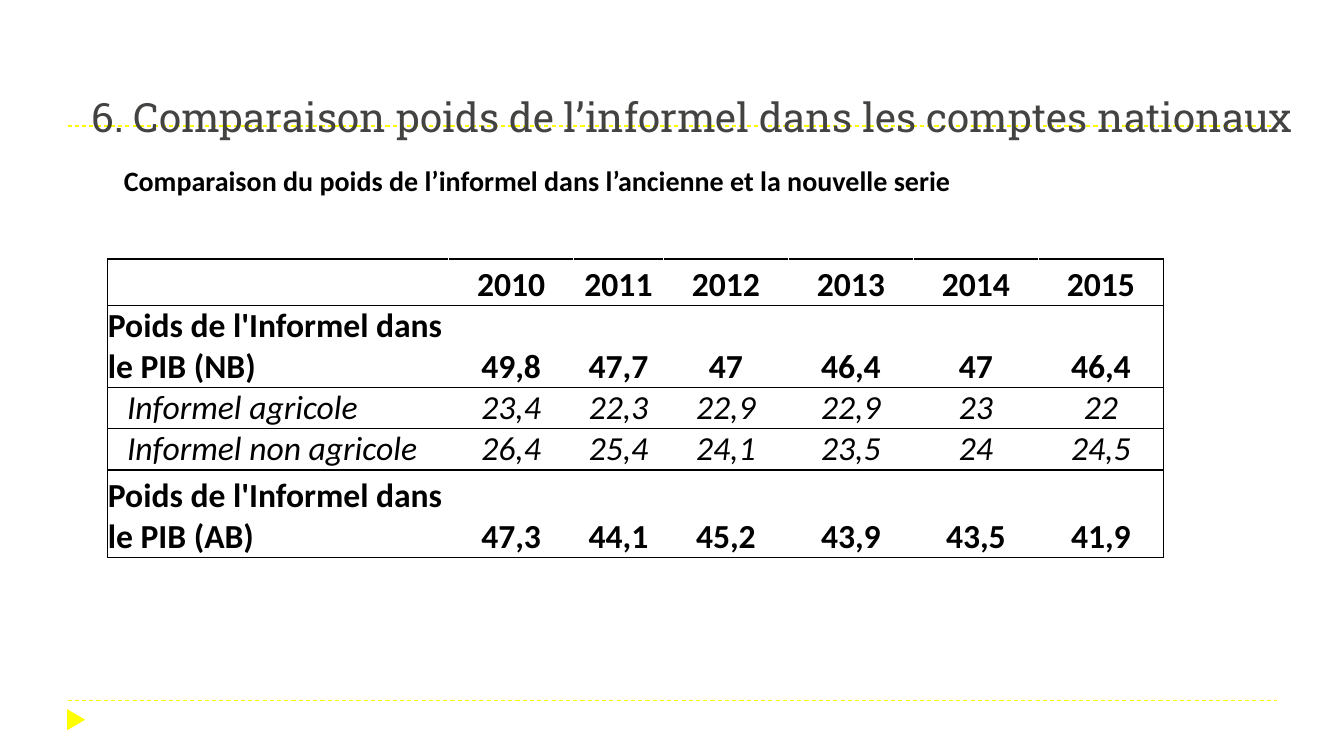
from dataclasses import dataclass

from lxml import etree
from pptx import Presentation
from pptx.dml.color import RGBColor
from pptx.enum.dml import MSO_LINE
from pptx.enum.shapes import MSO_CONNECTOR, MSO_SHAPE
from pptx.enum.text import MSO_ANCHOR, MSO_AUTO_SIZE, PP_ALIGN
from pptx.oxml.ns import qn
from pptx.util import Inches, Pt

YELLOW, BLACK, WHITE, GREY = "FFFF00", "000000", "FFFFFF", "434342"


@dataclass
class TextBox:
    text: str
    left: float
    top: float
    width: float
    height: float
    font: str
    size: float
    color: str
    bold: bool = False
    anchor: MSO_ANCHOR = MSO_ANCHOR.TOP
    grow: bool = False


@dataclass
class TableRow:
    label: str
    values: list[str]
    height: float
    detail: bool = False
    top: float = 1
    bottom: float = 1


TEXTS = [
    TextBox("Comparaison du poids de l’informel dans l’ancienne et la nouvelle serie",
            1.13, 1.57, 10.53, 0.44, "Calibri", 20, BLACK, bold=True, grow=True),
    TextBox("6. Comparaison poids de l’informel dans les comptes nationaux",
            0.81, 0.36, 12.26, 1.08, "Roboto Slab", 28.8, GREY, anchor=MSO_ANCHOR.BOTTOM),
]
ROWS = [
    TableRow("", ["2010", "2011", "2012", "2013", "2014", "2015"], 0.46, bottom=0.5),
    TableRow("Poids de l'Informel dans le PIB (NB)",
             ["49,8", "47,7", "47", "46,4", "47", "46,4"], 0.62, top=0.5),
    TableRow("Informel agricole",
             ["23,4", "22,3", "22,9", "22,9", "23", "22"], 0.41, detail=True),
    TableRow("Informel non agricole",
             ["26,4", "25,4", "24,1", "23,5", "24", "24,5"], 0.41, detail=True),
    TableRow("Poids de l'Informel dans le PIB (AB)",
             ["47,3", "44,1", "45,2", "43,9", "43,5", "41,9"], 0.87),
]
COLUMNS = [3.38, 1.24, 0.89, 1.24, 1.24, 1.24, 1.24]


def rgb(color: str) -> RGBColor:
    return RGBColor.from_string(color)


def add_rule(s, y: float) -> None:
    line = s.shapes.add_connector(MSO_CONNECTOR.STRAIGHT, Inches(0.67), Inches(y),
                                  Inches(12.67), Inches(y))
    line.line.color.rgb = rgb(YELLOW)
    line.line.width = Pt(0.75)
    line.line.dash_style = MSO_LINE.DASH
    etree.SubElement(line._element.spPr, qn("a:effectLst"))


def add_text(s, box: TextBox) -> None:
    sp = s.shapes.add_textbox(Inches(box.left), Inches(box.top),
                              Inches(box.width), Inches(box.height))
    tf = sp.text_frame
    tf.word_wrap = True
    tf.vertical_anchor = box.anchor
    if box.grow:
        tf.auto_size = MSO_AUTO_SIZE.SHAPE_TO_FIT_TEXT
    p = tf.paragraphs[0]
    p.text = box.text
    p.font.name = box.font
    p.font.size = Pt(box.size)
    p.font.bold = box.bold
    p.font.color.rgb = rgb(box.color)


def set_border(cell, side: str, color: str, width: float) -> None:
    line = etree.SubElement(cell._tc.get_or_add_tcPr(), qn(f"a:{side}"), w=str(Pt(width)))
    fill = etree.SubElement(line, qn("a:solidFill"))
    etree.SubElement(fill, qn("a:srgbClr"), val=color)


def fill_cell(cell, row: TableRow, column: int) -> None:
    is_label = column == 0
    cell.margin_left = Inches(0.19 if is_label and row.detail else 0)
    cell.margin_right = cell.margin_top = cell.margin_bottom = 0
    cell.vertical_anchor = MSO_ANCHOR.BOTTOM
    p = cell.text_frame.paragraphs[0]
    p.text = row.label if is_label else row.values[column - 1]
    p.alignment = PP_ALIGN.LEFT if is_label else PP_ALIGN.CENTER
    p.font.name = "Calibri"
    p.font.size = Pt(24)
    p.font.bold = not row.detail
    p.font.italic = row.detail
    p.font.color.rgb = rgb(BLACK)
    # Black outer frame and row lines, white column lines
    set_border(cell, "lnL", BLACK if is_label else WHITE, 1)
    set_border(cell, "lnR", BLACK if column == len(COLUMNS) - 1 else WHITE, 1)
    set_border(cell, "lnT", BLACK, row.top)
    set_border(cell, "lnB", BLACK, row.bottom)
    cell.fill.background()


def add_weights_table(s) -> None:
    frame = s.shapes.add_table(len(ROWS), len(COLUMNS), Inches(1.07), Inches(2.57),
                               Inches(10.46), Inches(2.94))
    table = frame.table
    table.first_row = table.horz_banding = False
    for column, width in zip(table.columns, COLUMNS):
        column.width = Inches(width)
    for i, row in enumerate(ROWS):
        table.rows[i].height = Inches(row.height)
        for j in range(len(COLUMNS)):
            fill_cell(table.cell(i, j), row, j)


def main() -> None:
    prs = Presentation()
    prs.slide_width, prs.slide_height = Inches(13.33), Inches(7.5)
    s = prs.slides.add_slide(prs.slide_layouts[6])

    # Dashed rules and corner marker
    for y in (6.95, 1.25):
        add_rule(s, y)
    marker = s.shapes.add_shape(MSO_SHAPE.ISOSCELES_TRIANGLE, Inches(0.65), Inches(7.05),
                                Inches(0.21), Inches(0.18))
    marker.rotation = 90
    marker.shadow.inherit = False
    marker.fill.solid()
    marker.fill.fore_color.rgb = rgb(YELLOW)
    marker.line.fill.background()

    # Table and headings
    add_weights_table(s)
    for box in TEXTS:
        add_text(s, box)

    prs.save("out.pptx")


if __name__ == "__main__":
    main()
